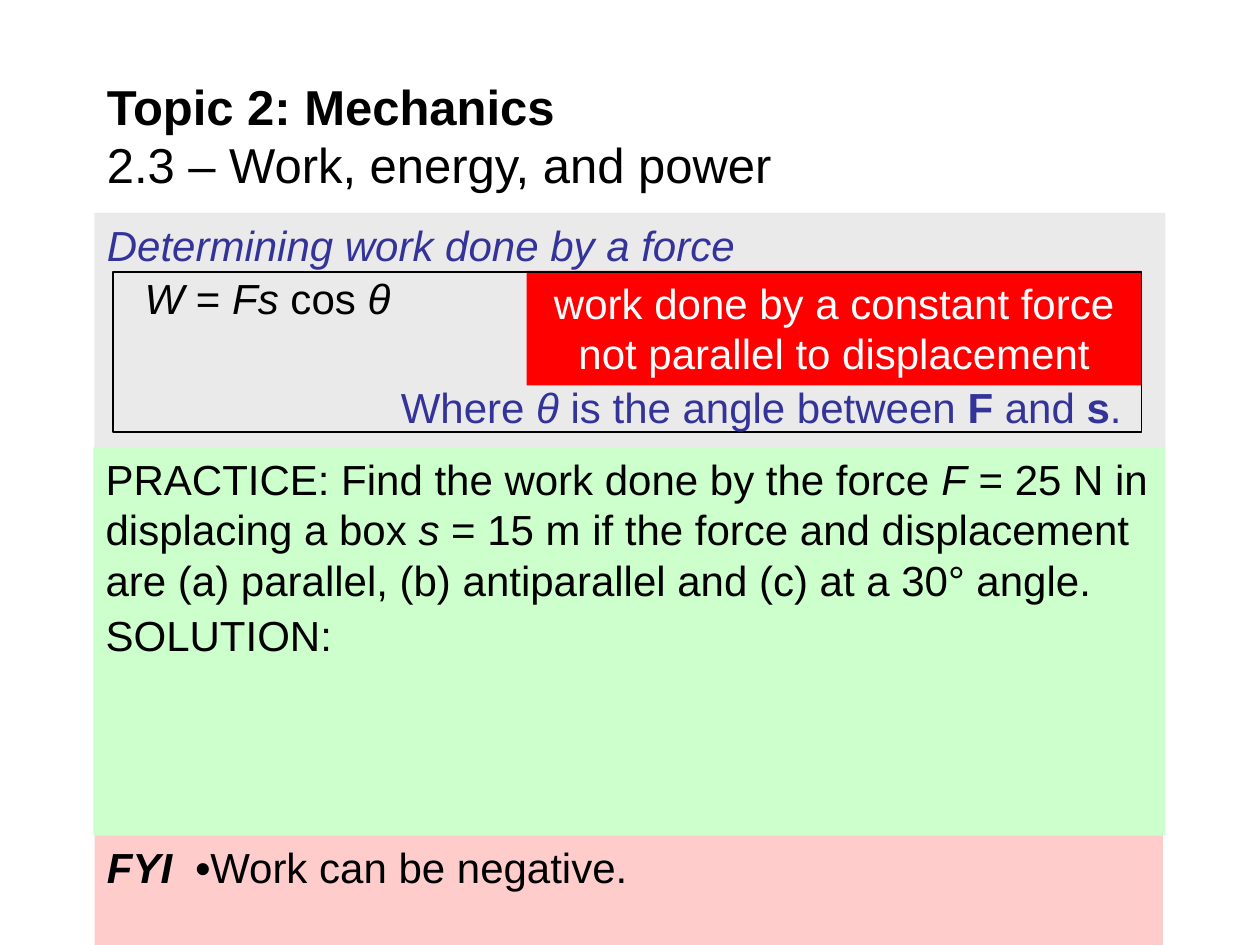
import pptx
import pptx.util
import pptx.dml.color
import pptx.enum.shapes
import pptx.enum.text

Inches = pptx.util.Inches
Pt = pptx.util.Pt
ALIGN = pptx.enum.text.PP_ALIGN
ANCHOR = pptx.enum.text.MSO_ANCHOR

THEME = {
    "font": "Arial", "title": 28, "body": 24,
    "black": "000000", "white": "FFFFFF", "blue": "333399",
    "grey": "EAEAEA", "green": "CCFFCC", "pink": "FFCCCC", "red": "FF0000",
}
BOLD = {"bold": True}
ITALIC = {"italic": True}

# Each paragraph is (spans, paragraph format); each span is (text, font format).
TITLE = [([("Topic 2: Mechanics", BOLD), ("\n", {}),
           ("2.3 – Work, energy, and power", {})], {})]
HEADING = [([("Determining work done by a force", ITALIC)], {})]
PRACTICE = [
    ([("PRACTICE: Find the work done by the force ", {}), ("F", ITALIC),
      (" = 25 N in displacing a box ", {}), ("s", ITALIC),
      (" = 15 m if the force and displacement are (a) parallel, "
       "(b) antiparallel and (c) at a 30° angle.", {})], {}),
    ([("SOLUTION:", {})], {"space_before": Pt(3)}),
]
FYI = [([("FYI  ", BOLD | ITALIC), ("•", BOLD),
         ("Work can be negative.", {})], {})]
FORMULA = [([("W", ITALIC), (" = ", {}), ("Fs ", ITALIC), ("cos ", {}),
             ("θ", ITALIC)], {"line_spacing": 0.9})]
LABEL = [([("work done by a constant force not parallel to displacement", {})],
          {"alignment": ALIGN.CENTER})]
ANGLE = [([("Where ", {}), ("θ", ITALIC), (" is the angle between ", {}),
           ("F", BOLD), (" and ", {}), ("s", BOLD), (".", {})],
          {"alignment": ALIGN.RIGHT, "line_spacing": 0.9})]

# Back to front: (left, top, width, height), paragraphs, style.
BOXES = [
    ((0.75, 1.69, 8.5, 1.87), HEADING, {"fill": "grey", "color": "blue"}),
    ((0.75, 0.58, 8.5, 0.98), TITLE, {"size": "title", "anchor": ANCHOR.MIDDLE}),
    ((0.74, 3.55, 8.51, 3.08), PRACTICE, {"fill": "green"}),
    ((0.75, 6.63, 8.48, 0.87), FYI, {"fill": "pink"}),
    ((1.05, 2.16, 2.57, 0.35), FORMULA, {}),
    ((4.18, 2.15, 4.88, 0.91), LABEL, {"fill": "red", "color": "white"}),
    ((0.9, 2.16, 8.16, 1.27), [], {"line": "black"}),
    ((1.18, 3.02, 7.82, 0.42), ANGLE, {"color": "blue"}),
]


def theme_color(name):
    return pptx.dml.color.RGBColor.from_string(THEME[name])


def set_all(target, values):
    for name, value in values.items():
        setattr(target, name, value)


def add_box(slide, place, style):
    """Add a rectangle where there is a fill or line, else a text box."""
    lengths = [Inches(value) for value in place]
    if not {"fill", "line"} & style.keys():
        return slide.shapes.add_textbox(*lengths)
    box = slide.shapes.add_shape(
        pptx.enum.shapes.MSO_SHAPE.RECTANGLE, *lengths)
    box.shadow.inherit = False
    if "fill" in style:
        box.fill.solid()
        box.fill.fore_color.rgb = theme_color(style["fill"])
    else:
        box.fill.background()
    if "line" in style:
        box.line.color.rgb = theme_color(style["line"])
        box.line.width = Pt(1)
    else:
        box.line.fill.background()
    return box


def write_text(box, paragraphs, style):
    frame = box.text_frame
    set_all(frame, {"word_wrap": True,
                    "vertical_anchor": style.get("anchor", ANCHOR.TOP)})
    base = {"name": THEME["font"], "size": Pt(THEME[style.get("size", "body")]),
            "bold": False, "italic": False}
    for index, (spans, layout) in enumerate(paragraphs):
        para = frame.add_paragraph() if index else frame.paragraphs[0]
        set_all(para, {"alignment": ALIGN.LEFT} | layout)
        for text, font in spans:
            if text == "\n":
                para.add_line_break()
                continue
            span = para.add_run()
            span.text = text
            set_all(span.font, base | font)
            span.font.color.rgb = theme_color(style.get("color", "black"))


def main():
    deck = pptx.Presentation()
    set_all(deck, {"slide_width": Inches(10), "slide_height": Inches(7.5)})
    slide = deck.slides.add_slide(deck.slide_layouts[6])
    for place, paragraphs, style in BOXES:
        box = add_box(slide, place, style)
        write_text(box, paragraphs, style)
    deck.save("out.pptx")


if __name__ == "__main__":
    main()
